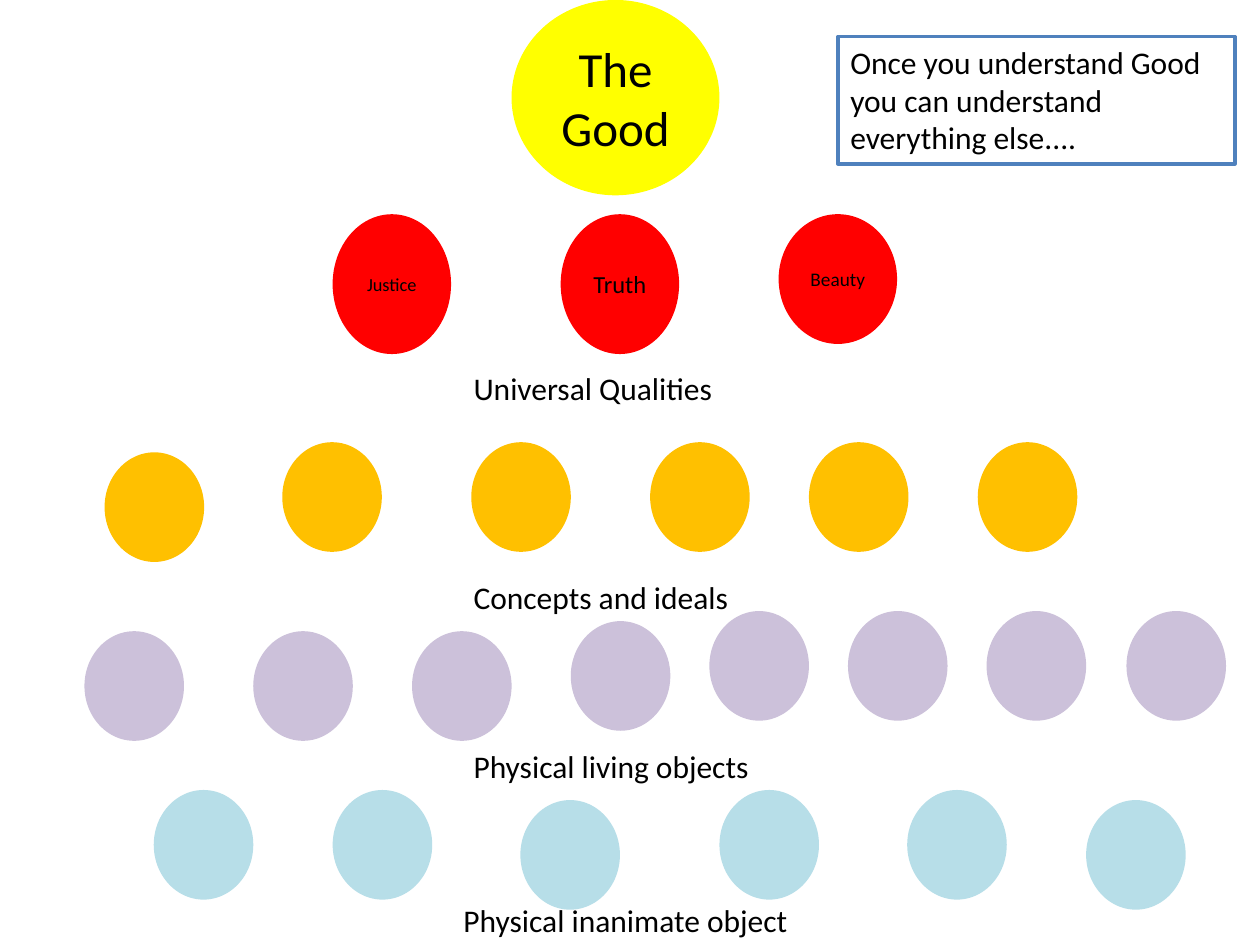
from dataclasses import dataclass
from typing import NamedTuple

from pptx import Presentation
from pptx.dml.color import RGBColor as Rgb
from pptx.enum.shapes import MSO_SHAPE as Kind
from pptx.enum.text import MSO_ANCHOR as Anchor, MSO_AUTO_SIZE as Fit, PP_ALIGN as Align
from pptx.util import Inches, Pt


@dataclass(frozen=True)
class Theme:
    font: str = "Calibri"
    ink: str = "000000"
    paper: str = "FFFFFF"
    edge: str = "4F81BD"
    good: str = "FFFF00"
    trait: str = "FF0000"
    ideal: str = "FFC000"
    living: str = "CCC1DA"
    object: str = "B7DEE8"
    body: float = 18
    large: float = 28


class Box(NamedTuple):
    left: float
    top: float
    width: float
    height: float


class Orb(NamedTuple):
    box: Box
    fill: str
    text: str
    size: float


class Label(NamedTuple):
    box: Box
    text: str


class Row(NamedTuple):
    fill: str
    top: float
    lefts: tuple[float, ...]
    drops: tuple[int, ...]


THEME = Theme()
DOT_WIDTH, DOT_HEIGHT, DROP = 0.79, 0.87, 0.08

ORBS = (
    Orb(Box(4.06, 0, 1.65, 1.55), THEME.good, "The Good", THEME.large),
    Orb(Box(2.64, 1.7, 0.94, 1.11), THEME.trait, "Justice", 10.5),
    Orb(Box(4.45, 1.7, 0.94, 1.11), THEME.trait, "Truth", 14),
    Orb(Box(6.18, 1.7, 0.94, 1.03), THEME.trait, "Beauty", 11),
)
LABELS = (
    Label(Box(3.66, 2.88, 2.52, 0.4), "Universal Qualities"),
    Label(Box(3.66, 4.54, 2.52, 0.4), "Concepts and ideals"),
    Label(Box(3.66, 5.88, 2.91, 0.4), "Physical living objects"),
    Label(Box(3.58, 7.1, 2.91, 0.4), "Physical inanimate object"),
)
ROWS = (
    Row(THEME.ideal, 3.51, (0.83, 2.24, 3.74, 5.16, 6.42, 7.76), (1, 0, 0, 0, 0, 0)),
    Row(THEME.living, 4.85, (0.67, 2.01, 3.27, 4.53, 5.63, 6.73, 7.83, 8.94),
        (2, 2, 2, 1, 0, 0, 0, 0)),
    Row(THEME.object, 6.27, (1.22, 2.64, 4.13, 5.71, 7.2, 8.62), (0, 0, 1, 0, 0, 1)),
)
NOTE = Label(Box(6.65, 0.29, 3.15, 1.01),
             "Once you understand Good you can understand everything else....")


def place(box: Box) -> list[int]:
    return [Inches(side) for side in box]


def apply(target, form: dict) -> None:
    for name, value in form.items():
        setattr(target, name, value)


def write(shape, text: str, size: float, align: Align, frame: dict) -> None:
    apply(shape.text_frame, {"word_wrap": True} | frame)
    line = shape.text_frame.paragraphs[0]
    line.alignment = align
    run = line.add_run()
    run.text = text
    apply(run.font, {"name": THEME.font, "size": Pt(size)})
    run.font.color.rgb = Rgb.from_string(THEME.ink)


def draw_shape(slide, kind: Kind, box: Box, fill: str):
    shape = slide.shapes.add_shape(kind, *place(box))
    shape.shadow.inherit = False
    shape.fill.solid()
    shape.fill.fore_color.rgb = Rgb.from_string(fill)
    shape.line.fill.background()
    return shape


def draw_orb(slide, orb: Orb) -> None:
    shape = draw_shape(slide, Kind.OVAL, orb.box, orb.fill)
    write(shape, orb.text, orb.size, Align.CENTER, {"vertical_anchor": Anchor.MIDDLE})


def draw_label(slide, label: Label) -> None:
    shape = slide.shapes.add_textbox(*place(label.box))
    write(shape, label.text, THEME.body, Align.LEFT, {"auto_size": Fit.SHAPE_TO_FIT_TEXT})


def draw_row(slide, row: Row) -> None:
    for left, drop in zip(row.lefts, row.drops):
        box = Box(left, row.top + drop * DROP, DOT_WIDTH, DOT_HEIGHT)
        draw_shape(slide, Kind.OVAL, box, row.fill)


def draw_note(slide, note: Label) -> None:
    shape = draw_shape(slide, Kind.RECTANGLE, note.box, THEME.paper)
    shape.line.color.rgb = Rgb.from_string(THEME.edge)
    shape.line.width = Pt(2)
    write(shape, note.text, THEME.body, Align.LEFT,
          {"vertical_anchor": Anchor.TOP, "auto_size": Fit.SHAPE_TO_FIT_TEXT})


def main() -> None:
    deck = Presentation()
    apply(deck, {"slide_width": Inches(10), "slide_height": Inches(7.5)})
    slide = deck.slides.add_slide(deck.slide_layouts[6])
    for orb in ORBS:
        draw_orb(slide, orb)
    for label in LABELS:
        draw_label(slide, label)
    for row in ROWS:
        draw_row(slide, row)
    draw_note(slide, NOTE)
    deck.save("out.pptx")


if __name__ == "__main__":
    main()
